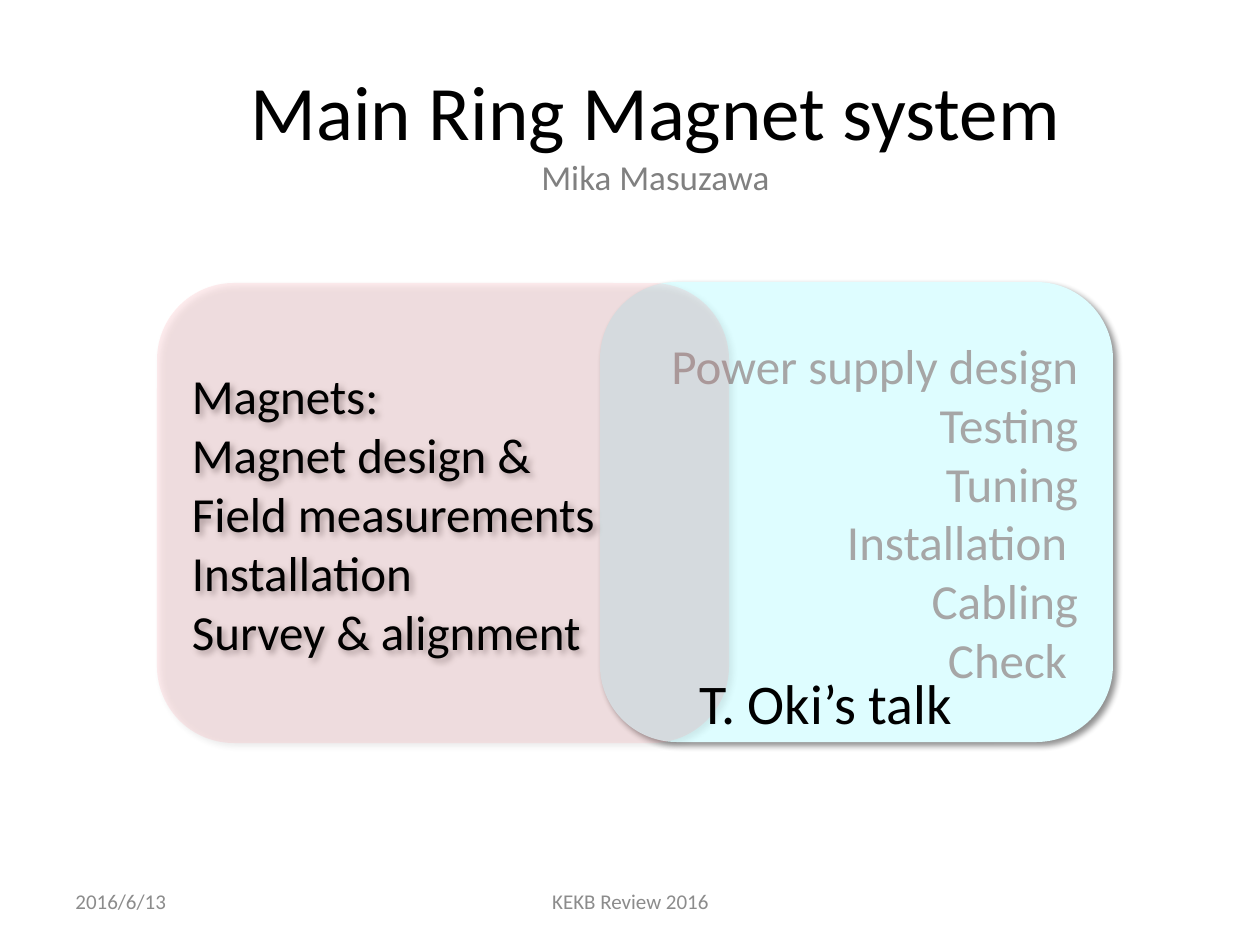
from dataclasses import dataclass

from lxml.etree import SubElement
from pptx import Presentation
from pptx.dml.color import RGBColor
from pptx.enum.shapes import MSO_SHAPE
from pptx.enum.text import MSO_ANCHOR, MSO_AUTO_SIZE, PP_ALIGN
from pptx.oxml.ns import qn
from pptx.util import Emu, Inches, Pt

PX = Inches(1) // 126
FONT = "Calibri"


@dataclass
class Box:
    left: int
    top: int
    width: int
    height: int

    def emu(self) -> list[Emu]:
        return [Emu(n * PX) for n in (self.left, self.top, self.width, self.height)]


@dataclass
class Panel:
    box: Box
    lines: list[str]
    fill: str
    ink: str
    align: PP_ALIGN
    alpha: int = 100


@dataclass
class Label:
    box: Box
    text: str
    size: int
    ink: str
    align: PP_ALIGN = PP_ALIGN.LEFT
    anchor: MSO_ANCHOR = MSO_ANCHOR.MIDDLE
    wrap: bool = True


PANELS = [
    Panel(Box(600, 282, 513, 460),
          ["Power supply design", "Testing", "Tuning", "Installation ", "Cabling", "Check "],
          "DEFDFF", "A6A6A6", PP_ALIGN.RIGHT),
    Panel(Box(157, 283, 572, 460),
          ["Magnets:", "Magnet design &", "Field measurements", "Installation",
           "Survey & alignment"],
          "FF9AA3", "000000", PP_ALIGN.LEFT, 18),
]
LABELS = [
    Label(Box(63, 876, 294, 50), "2016/6/13", 12, "8C8C8C"),
    Label(Box(431, 876, 399, 50), "KEKB Review 2016", 12, "8C8C8C", PP_ALIGN.CENTER),
    Label(Box(687, 662, 281, 81), "T. Oki’s talk", 32, "000000",
          anchor=MSO_ANCHOR.TOP, wrap=False),
]


def tint(color, code: str) -> None:
    color.rgb = RGBColor.from_string(code)


def style(font, size: int, ink: str) -> None:
    font.name = FONT
    font.size = Pt(size)
    tint(font.color, ink)


def write(frame, text: str, size: int, ink: str, align: PP_ALIGN) -> None:
    frame.text = text
    for para in frame.paragraphs:
        para.alignment = align
        for run in para.runs:
            style(run.font, size, ink)


def fade(node, percent: int) -> None:
    """Set the opacity of a colour element."""
    SubElement(node, qn("a:alpha")).set("val", str(percent * 1000))


def shade(shape) -> None:
    """Give the shape a soft shadow to the lower right."""
    shape.shadow.inherit = False
    effects = shape._element.spPr.find(qn("a:effectLst"))
    outer = SubElement(effects, qn("a:outerShdw"), blurRad=str(Pt(4)),
                       dist=str(Pt(3)), dir=str(45 * 60000), rotWithShape="0")
    fade(SubElement(outer, qn("a:srgbClr"), val="000000"), 43)


def draw_title(slide) -> None:
    title = slide.shapes.title
    title.left, title.top, title.width, title.height = Box(120, 29, 1071, 203).emu()
    frame = title.text_frame
    frame.text = "Main Ring Magnet system\vMika Masuzawa"
    frame.auto_size = MSO_AUTO_SIZE.NONE
    frame.vertical_anchor = MSO_ANCHOR.MIDDLE
    para = frame.paragraphs[0]
    para.alignment = PP_ALIGN.CENTER
    head, author = para.runs
    style(head.font, 44, "000000")
    style(author.font, 20, "808080")


def draw_panel(slide, panel: Panel) -> None:
    shape = slide.shapes.add_shape(MSO_SHAPE.ROUNDED_RECTANGLE, *panel.box.emu())
    shape.fill.solid()
    tint(shape.fill.fore_color, panel.fill)
    if panel.alpha < 100:
        fade(shape._element.spPr.find(qn("a:solidFill"))[0], panel.alpha)
    shape.line.fill.background()
    shade(shape)
    shape.text_frame.vertical_anchor = MSO_ANCHOR.MIDDLE
    write(shape.text_frame, "\n".join(panel.lines), 28, panel.ink, panel.align)


def draw_label(slide, label: Label) -> None:
    frame = slide.shapes.add_textbox(*label.box.emu()).text_frame
    frame.word_wrap = label.wrap
    frame.vertical_anchor = label.anchor
    if not label.wrap:
        frame.auto_size = MSO_AUTO_SIZE.SHAPE_TO_FIT_TEXT
    write(frame, label.text, label.size, label.ink, label.align)


def main() -> None:
    deck = Presentation()
    deck.slide_width, deck.slide_height = Inches(10), Inches(7.5)
    slide = deck.slides.add_slide(deck.slide_layouts[5])
    draw_title(slide)
    for panel in PANELS:
        draw_panel(slide, panel)
    for label in LABELS:
        draw_label(slide, label)
    deck.save("out.pptx")


if __name__ == "__main__":
    main()
